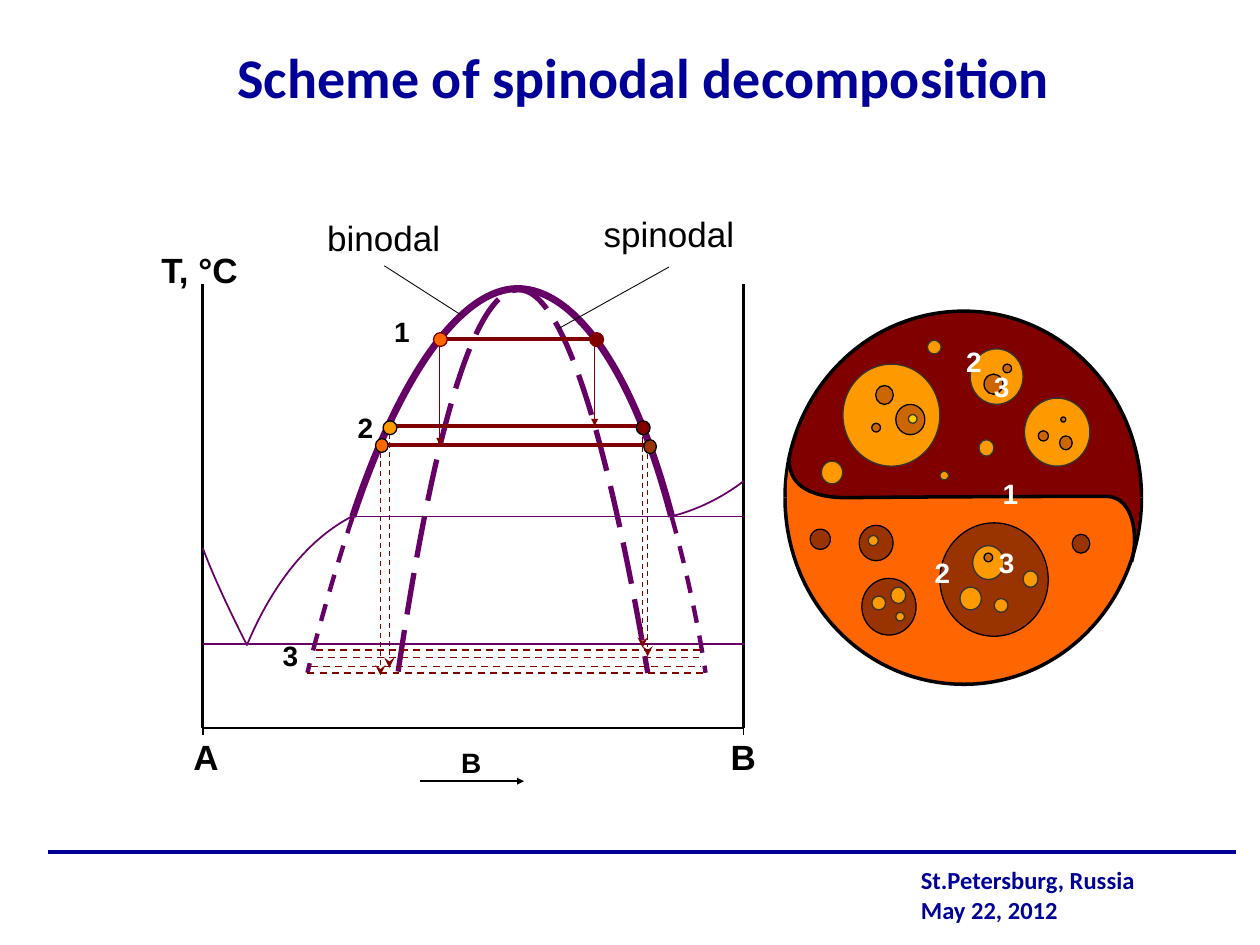
"""Build a slide with a phase diagram and a drop showing spinodal decomposition."""
from dataclasses import dataclass
from typing import Optional

from lxml import etree
from pptx import Presentation
from pptx import util as u
from pptx.dml import color
from pptx.enum import dml, shapes, text
from pptx.oxml import ns

NAVY, BLACK, WHITE, GREY = "000099", "000000", "FFFFFF", "333333"
PURPLE, MAROON, RUST = "660066", "800000", "993300"
ORANGE, AMBER, COPPER, GOLD = "FF6600", "FF9900", "CC6600", "FFCC00"
DASH, LONG_DASH = dml.MSO_LINE.DASH, dml.MSO_LINE.LONG_DASH
LEFT, CENTER, RIGHT = text.PP_ALIGN.LEFT, text.PP_ALIGN.CENTER, text.PP_ALIGN.RIGHT
TOP, MIDDLE = text.MSO_ANCHOR.TOP, text.MSO_ANCHOR.MIDDLE
FLUSH, PADDED = (0, 0), (7.2, 3.6)
AXIS_LEFT, AXIS_RIGHT, AXIS_TOP, AXIS_BASE = 115.9, 424.8, 162, 416.2


@dataclass
class Stroke:
    color: str
    width: float
    dash: Optional[dml.MSO_LINE] = None
    head: Optional[dict] = None


@dataclass
class Lines:
    stroke: Stroke
    ends: list


@dataclass
class Curve:
    points: list
    stroke: Optional[Stroke] = None
    fill: Optional[str] = None


@dataclass
class Dots:
    fill: str
    line: str
    boxes: list


@dataclass
class Label:
    words: str
    box: tuple
    size: float = 16
    color: str = BLACK
    bold: bool = True
    font: str = "Arial"
    align: text.PP_ALIGN = CENTER
    anchor: text.MSO_ANCHOR = TOP
    inset: tuple = FLUSH
    wrap: bool = True


TRIANGLE = {"type": "triangle", "w": "sm", "len": "sm"}
OUTLINE = Stroke(BLACK, 2)
THIN = Stroke(BLACK, 1)
PHASE = Stroke(PURPLE, 1)
TAIL = Stroke(PURPLE, 2.5, DASH)

DROP = [
    Curve([(448.6, 284.4), (448.6, 225.4), (493.9, 177.8), (550.8, 177.8),
           (607, 177.8), (652.3, 225.4), (652.3, 284.4)], OUTLINE, MAROON),
    Curve([(448.6, 284.4), (448.6, 343.4), (493.9, 391), (550.8, 391),
           (607, 391), (652.3, 343.4), (652.3, 284.4)], OUTLINE, ORANGE),
]
DROPLETS = [
    Dots(AMBER, GREY, [
        (481.7, 208.1, 55.4, 58.3), (554.4, 199.4, 30.2, 31.7), (585.4, 227.5, 37.4, 38.9),
        (537.1, 269.3, 5, 5), (529.9, 194.4, 7.9, 7.9), (469.4, 263.5, 12.2, 13),
        (559.4, 251.3, 8.6, 9.4)]),
    Dots(RUST, BLACK, [
        (537.1, 298.8, 61.9, 64.8), (492.5, 330.5, 31, 32.4), (463, 302.4, 11.5, 11.5),
        (491, 300.2, 19.4, 20.2), (612.7, 305.3, 10.1, 10.8)]),
    Dots(COPPER, BLACK, [
        (500.4, 220.3, 10.1, 10.8), (511.9, 231.1, 16.6, 17.3), (498.2, 241.9, 5, 5),
        (562.3, 213.8, 10.8, 11.5), (573.1, 208.1, 5, 5), (606.2, 238.3, 2.9, 2.9),
        (593.3, 246.2, 5.8, 5.8), (605.5, 249.1, 7.2, 7.9)]),
    Dots(GOLD, GREY, [(519.1, 236.9, 5, 5)]),
    Dots(AMBER, GREY, [
        (555.8, 311.8, 18, 19.4), (584.6, 326.2, 8.6, 9.4), (568.1, 342, 7.9, 7.9),
        (548.6, 335.5, 12.2, 13), (498.2, 340.6, 7.9, 7.9), (511.9, 349.9, 5, 5),
        (509, 335.5, 8.6, 9.4), (496.1, 306, 5.8, 5.8)]),
    Dots(COPPER, BLACK, [(562.3, 316.1, 5, 5)]),
]
INTERFACE = [
    Curve([(478.8, 284.4), (464.4, 283), (452.2, 279.4), (451.4, 263.5),
           (449.3, 275.8), (449.3, 280.1), (450, 286.6),
           (464.4, 286.6), (478.1, 285.8), (478.1, 285.8)], fill=ORANGE),
    Curve([(624.2, 283.7), (644.4, 282.2), (648, 292.3), (648.7, 308.9),
           (650.9, 297.4), (651.6, 288.7), (651.6, 281.5),
           (636.5, 282.2), (624.2, 281.5), (624.2, 281.5)], fill=MAROON),
    Curve([(451.4, 259.2), (448.6, 276.5), (462.2, 284.4), (483.8, 284.4),
           (483.8, 284.4), (547.9, 283.7), (632.9, 283.7),
           (647.3, 284.4), (650.9, 305.3), (646.6, 321.1)], OUTLINE),
]
PHASE_CURVES = [
    Curve([(201.6, 295.2), (230.4, 208.8), (265.7, 164.9), (295.9, 164.9),
           (326.2, 164.9), (360.7, 206.6), (383.8, 295.2)], Stroke(PURPLE, 4)),
    Curve([(227.5, 383.8), (244.8, 267.1), (267.8, 166.3), (295.9, 165.6),
           (323.3, 164.2), (349.2, 262.1), (370.1, 384.5)], Stroke(PURPLE, 3, LONG_DASH)),
    Curve([(383.8, 295.2), (397.4, 343.4), (403.2, 384.5), (403.2, 384.5)], TAIL),
    Curve([(201.6, 295.2), (185, 345.6), (175.7, 384.5), (175.7, 384.5)], TAIL),
    Curve([(200.9, 295.2), (164.9, 313.9), (146.9, 355), (141.1, 368.6),
           (139.7, 365.8), (123.8, 334.8), (115.9, 313.2)], PHASE),
    Curve([(383, 295.2), (407.5, 289.4), (424.8, 275), (424.8, 275)], PHASE),
]
FRAME_LINES = [
    Lines(Stroke(NAVY, 2.25), [(27.4, 486.7, 706.3, 486.7)]),
    Lines(Stroke(BLACK, 1.5), [(x, AXIS_TOP, x, AXIS_BASE) for x in (AXIS_RIGHT, AXIS_LEFT)]),
    Lines(THIN, [(AXIS_LEFT, AXIS_BASE, AXIS_RIGHT, AXIS_BASE)]
          + [(x, 419.8, x, AXIS_BASE) for x in (AXIS_LEFT, AXIS_RIGHT)]),
    Lines(PHASE, [(200.9, 295.2, 425.5, 295.2), (AXIS_LEFT, 367.9, 425.5, 367.9)]),
]
COOLING_LINES = [
    Lines(Stroke(MAROON, 2), [(251.3, 193.7, 339.8, 193.7), (222.5, 243.4, 366.5, 243.4),
                              (218.2, 254.2, 370.8, 254.2)]),
    Lines(Stroke(MAROON, 0.75, head=TRIANGLE),
          [(251.3, 193.7, 251.3, 254.2), (339.8, 193.7, 339.8, 243.4)]),
    Lines(Stroke(MAROON, 0.75, DASH, {"type": "stealth"}),
          [(217.4, 253.4, 217.4, 385.9), (367.2, 244.8, 367.2, 370.1),
           (222.5, 247.7, 222.5, 381.6), (370.1, 254.2, 370.1, 375.1)]),
    Lines(Stroke(MAROON, 1, DASH),
          [(180.7, 371.5, 400.3, 371.5), (177.8, 380.9, 400.3, 380.9),
           (180.7, 375.8, 399.6, 375.8), (175.7, 384.5, 403.2, 384.5)]),
    Lines(Stroke("080808", 0.5), [(219.6, 151.9, 263.5, 180), (319, 187.9, 382.3, 152.6)]),
    Lines(Stroke(BLACK, 1, head=TRIANGLE), [(239.8, 446.4, 299.5, 446.4)]),
]
STATES = [Dots(fill, line, [box]) for fill, line, box in [
    (RUST, BLACK, (367.9, 251.3, 7.2, 7.9)), (MAROON, BLACK, (363.6, 240.5, 7.9, 7.9)),
    (AMBER, BLACK, (218.9, 240.5, 7.9, 7.9)), (ORANGE, BLACK, (214.6, 250.6, 7.2, 7.9)),
    (MAROON, MAROON, (337, 190.1, 7.9, 7.9)), (ORANGE, MAROON, (247.7, 190.1, 7.9, 7.9))]]
LABELS = [
    Label("St.Petersburg, Russia\vMay 22, 2012", (519.1, 493.2, 140, 36), 14, NAVY,
          font="Calibri", align=LEFT, anchor=MIDDLE, inset=PADDED),
    Label("Scheme of spinodal decomposition", (61.9, 18, 612, 51.1), 32, NAVY,
          font="Calibri", anchor=MIDDLE, inset=PADDED),
    Label("A", (100.1, 420.5, 35.3, 21.6), 20),
    Label("B", (406.1, 420.5, 37.4, 21.6), 20),
    Label("T, °C", (92.2, 141.8, 46.1, 23.8), 20, align=LEFT, wrap=False),
    Label("B", (239.8, 426.2, 59, 19.4)),
    Label("binodal", (169.2, 123.8, 100.1, 28.1), 20, bold=False),
    Label("spinodal", (336.2, 121.7, 92.2, 31.7), 20, bold=False),
    Label("1", (190.1, 176.4, 51.1, 41.8), align=RIGHT, inset=PADDED),
    Label("2", (177.8, 231.1, 42.5, 41.8), align=RIGHT, inset=PADDED),
    Label("3", (143.3, 361.4, 45.4, 35.3), inset=PADDED),
] + [Label(words, (left, top, 18.7, height), color=WHITE)
     for words, left, top, height in [
         ("1", 568.1, 272.2, 31), ("2", 529.2, 317.5, 31), ("3", 565.9, 311.8, 20.2),
         ("2", 547.2, 196.6, 30.2), ("3", 563, 211, 20.2)]]


def paint(fill, value: Optional[str]) -> None:
    """Give a fill a solid hex colour, or none."""
    if value is None:
        fill.background()
    else:
        fill.solid()
        fill.fore_color.rgb = color.RGBColor.from_string(value)


def apply_stroke(line, stroke: Optional[Stroke]) -> None:
    """Set the colour, width and dash of a line."""
    paint(line.fill, stroke and stroke.color)
    if stroke:
        for name, value in {"width": u.Pt(stroke.width), "dash_style": stroke.dash}.items():
            setattr(line, name, value)


def draw_lines(page, lines: Lines) -> None:
    """Draw straight connectors that share a stroke."""
    for ends in lines.ends:
        line = page.shapes.add_connector(shapes.MSO_CONNECTOR.STRAIGHT, *map(u.Pt, ends))
        apply_stroke(line.line, lines.stroke)
        if lines.stroke.head:
            outline = line.line._get_or_add_ln()
            etree.SubElement(outline, ns.qn("a:tailEnd"), lines.stroke.head)
        etree.SubElement(line._element.spPr, ns.qn("a:effectLst"))


def draw_curve(page, curve: Curve) -> None:
    """Draw a freeform whose points are joined in threes into Bezier segments."""
    start, *rest = [(u.Pt(x), u.Pt(y)) for x, y in curve.points]
    builder = page.shapes.build_freeform(*start)
    builder.add_line_segments(rest, close=curve.stroke is None)
    shape = builder.convert_to_shape()
    segments = list(shape._element.iter(ns.qn("a:lnTo")))
    for first, *others in zip(*[iter(segments)] * 3):
        first.tag = ns.qn("a:cubicBezTo")
        for segment in others:
            first.append(segment[0])
            segment.getparent().remove(segment)
    shape.shadow.inherit = False
    paint(shape.fill, curve.fill)
    apply_stroke(shape.line, curve.stroke)


def draw_dots(page, dots: Dots) -> None:
    """Draw ellipses that share their colours."""
    for bounds in dots.boxes:
        dot = page.shapes.add_shape(shapes.MSO_SHAPE.OVAL, *map(u.Pt, bounds))
        dot.shadow.inherit = False
        paint(dot.fill, dots.fill)
        apply_stroke(dot.line, Stroke(dots.line, 0.75))


def draw_label(page, label: Label) -> None:
    """Write a label in a text box."""
    frame = page.shapes.add_textbox(*map(u.Pt, label.box)).text_frame
    across, down = map(u.Pt, label.inset)
    layout = {"margin_left": across, "margin_right": across, "margin_top": down,
              "margin_bottom": down, "word_wrap": label.wrap, "vertical_anchor": label.anchor}
    for name, value in layout.items():
        setattr(frame, name, value)
    para = frame.paragraphs[0]
    para.text, para.alignment = label.words, label.align
    style = {"name": label.font, "size": u.Pt(label.size), "bold": label.bold}
    for span in para.runs:
        for name, value in style.items():
            setattr(span.font, name, value)
        paint(span.font.fill, label.color)


def main() -> None:
    """Build and save the deck."""
    deck = Presentation()
    deck.slide_width, deck.slide_height = u.Pt(720), u.Pt(540)
    page = deck.slides.add_slide(deck.slide_layouts[6])
    layers = [(draw_curve, DROP), (draw_dots, DROPLETS), (draw_curve, INTERFACE),
              (draw_lines, FRAME_LINES), (draw_curve, PHASE_CURVES),
              (draw_lines, COOLING_LINES), (draw_dots, STATES), (draw_label, LABELS)]
    for draw, items in layers:
        for item in items:
            draw(page, item)
    deck.save("out.pptx")


if __name__ == "__main__":
    main()
